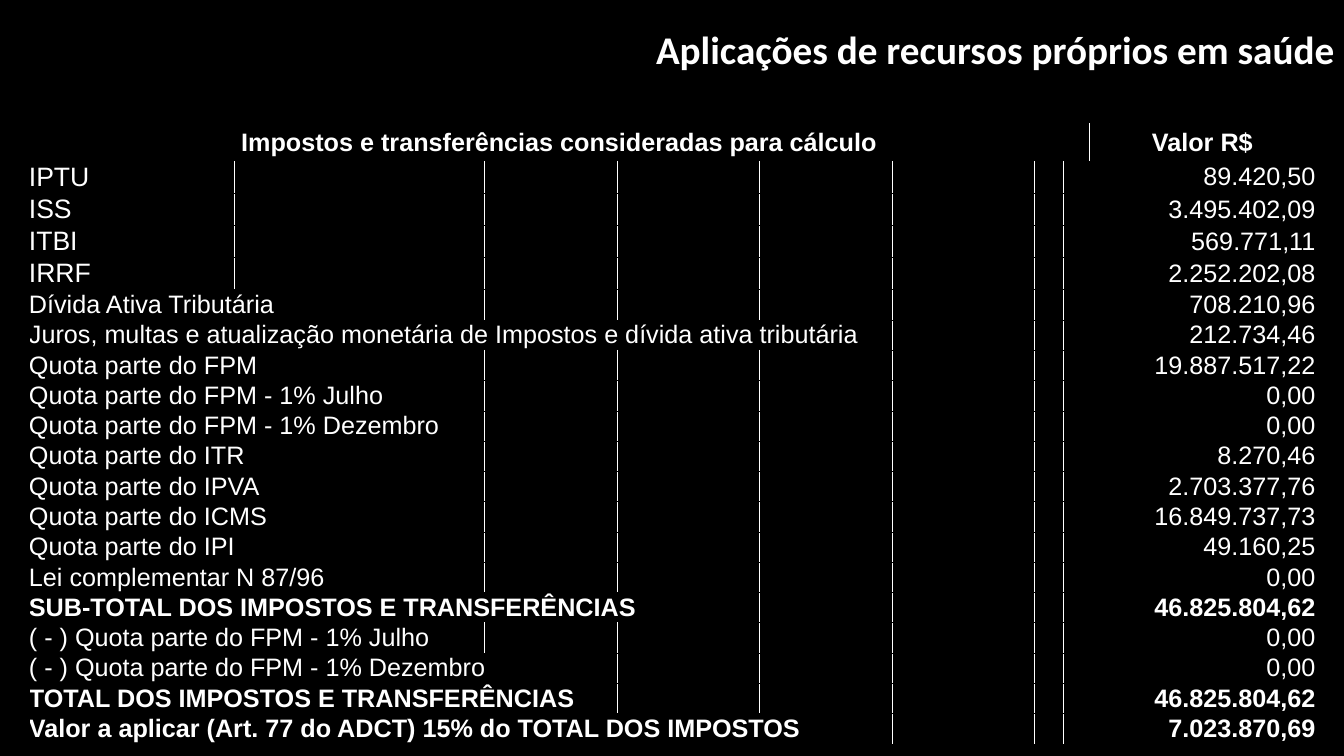
import lxml.etree
import pptx
import pptx.dml.color
import pptx.enum.text
import pptx.oxml.ns
import pptx.util
from dataclasses import dataclass
from pptx.util import Cm, Pt

ALIGN = pptx.enum.text.PP_ALIGN
MIDDLE = pptx.enum.text.MSO_ANCHOR.MIDDLE


@dataclass(frozen=True)
class Theme:
    black: str = "000000"
    white: str = "FFFFFF"
    title_font: str = "Calibri"
    table_font: str = "Arial"
    title_size: int = 28
    tax_size: int = 19
    body_size: int = 18
    border_width: float = 0.5


THEME = Theme()
TITLE = "Aplicações de recursos próprios em saúde"
COLUMN_WIDTHS = (5.18, 6.3, 3.35, 3.58, 3.35, 3.58, 0.74, 0.64, 5.7)
VALUE_COLUMN = len(COLUMN_WIDTHS) - 1
HEADER = ("Impostos e transferências consideradas para cálculo", "Valor R$")
HEADER_HEIGHT, TAX_HEIGHT, BODY_HEIGHT = 0.94, 0.81, 0.76

# Label, value, number of columns the label spans
TAXES = (
    ("IPTU", "89.420,50", 1),
    ("ISS", "3.495.402,09", 1),
    ("ITBI", "569.771,11", 1),
    ("IRRF", "2.252.202,08", 1),
)
TRANSFERS = (
    ("Dívida Ativa Tributária", "708.210,96", 2),
    ("Juros, multas e atualização monetária de Impostos e dívida ativa tributária", "212.734,46", 5),
    ("Quota parte do FPM", "19.887.517,22", 2),
    ("Quota parte do FPM - 1% Julho", "0,00", 2),
    ("Quota parte do FPM - 1% Dezembro", "0,00", 2),
    ("Quota parte do ITR", "8.270,46", 2),
    ("Quota parte do IPVA", "2.703.377,76", 2),
    ("Quota parte do ICMS", "16.849.737,73", 2),
    ("Quota parte do IPI", "49.160,25", 2),
    ("Lei complementar N 87/96", "0,00", 2),
)
SUBTOTAL = (("SUB-TOTAL DOS IMPOSTOS E TRANSFERÊNCIAS", "46.825.804,62", 4),)
DEDUCTIONS = (
    ("( - ) Quota parte do FPM - 1% Julho", "0,00", 2),
    ("( - ) Quota parte do FPM - 1% Dezembro", "0,00", 3),
)
TOTALS = (
    ("TOTAL DOS IMPOSTOS E TRANSFERÊNCIAS", "46.825.804,62", 3),
    ("Valor a aplicar (Art. 77 do ADCT) 15% do TOTAL DOS IMPOSTOS", "7.023.870,69", 5),
)
# Rows, row height, label size, bold
GROUPS = (
    (TAXES, TAX_HEIGHT, THEME.tax_size, False),
    (TRANSFERS, BODY_HEIGHT, THEME.body_size, False),
    (SUBTOTAL, BODY_HEIGHT, THEME.body_size, True),
    (DEDUCTIONS, BODY_HEIGHT, THEME.body_size, False),
    (TOTALS, BODY_HEIGHT, THEME.body_size, True),
)


def set_format(target, values):
    for name, value in values.items():
        setattr(target, name, value)


def write_text(frame, text, font, size, bold, alignment):
    para = frame.paragraphs[0]
    para.alignment = alignment
    span = para.add_run()
    span.text = text
    set_format(span.font, {"name": font, "size": Pt(size), "bold": bold})
    span.font.color.rgb = pptx.dml.color.RGBColor.from_string(THEME.white)


def add_title(page):
    box = page.shapes.add_textbox(Cm(6.78), Cm(0.51), Cm(27.09), Cm(1.45))
    box.text_frame.word_wrap = True
    write_text(box.text_frame, TITLE, THEME.title_font, THEME.title_size, True, ALIGN.RIGHT)


def add_border(cell, side):
    tag = pptx.oxml.ns.qn
    properties = cell._tc.get_or_add_tcPr()
    line = lxml.etree.SubElement(properties, tag(f"a:ln{side}"), w=str(Pt(THEME.border_width)))
    fill = lxml.etree.SubElement(line, tag("a:solidFill"))
    lxml.etree.SubElement(fill, tag("a:srgbClr"), val=THEME.black)


def format_cell(cell, column):
    """Clear the cell, with outer borders around the label area and the value."""
    set_format(cell, {
        "margin_left": 0, "margin_right": 0, "margin_top": 0, "margin_bottom": 0,
        "vertical_anchor": MIDDLE,
    })
    left = "L" if column in (0, VALUE_COLUMN) else ""
    right = "R" if column >= VALUE_COLUMN - 1 else ""
    for side in left + right + "TB":
        add_border(cell, side)
    cell.fill.background()
    # Keeps the line in an empty cell from stretching its row
    ending = cell.text_frame.paragraphs[0]._p.get_or_add_endParaRPr()
    ending.set("sz", str(THEME.body_size * 50))


def fill_row(table, index, texts, span, height, label_size, bold, alignments):
    table.rows[index].height = Cm(height)
    label, value = table.cell(index, 0), table.cell(index, VALUE_COLUMN)
    if span > 1:
        label.merge(table.cell(index, span - 1))
    sizes = (label_size, THEME.body_size)
    for cell, text, size, alignment in zip((label, value), texts, sizes, alignments):
        write_text(cell.text_frame, text, THEME.table_font, size, bold, alignment)


def add_tax_table(page):
    row_count = 1 + sum(len(group[0]) for group in GROUPS)
    frame = page.shapes.add_table(
        row_count, len(COLUMN_WIDTHS), Cm(0.73), Cm(3.12), Cm(32.42), Cm(15.58))
    table = frame.table
    set_format(table, {"first_row": False, "horz_banding": False})
    for column, width in zip(table.columns, COLUMN_WIDTHS):
        column.width = Cm(width)
    for position, cell in enumerate(table.iter_cells()):
        format_cell(cell, position % len(COLUMN_WIDTHS))
    fill_row(table, 0, HEADER, VALUE_COLUMN, HEADER_HEIGHT, THEME.body_size, True,
             (ALIGN.CENTER, ALIGN.CENTER))
    index = 1
    for rows, height, size, bold in GROUPS:
        for label, value, span in rows:
            fill_row(table, index, (label, value), span, height, size, bold,
                     (ALIGN.LEFT, ALIGN.RIGHT))
            index += 1


def main():
    deck = pptx.Presentation()
    set_format(deck, {"slide_width": Cm(33.87), "slide_height": Cm(19.05)})
    page = deck.slides.add_slide(deck.slide_layouts[6])
    page.background.fill.solid()
    page.background.fill.fore_color.rgb = pptx.dml.color.RGBColor.from_string(THEME.black)
    add_title(page)
    add_tax_table(page)
    deck.save("out.pptx")


if __name__ == "__main__":
    main()
